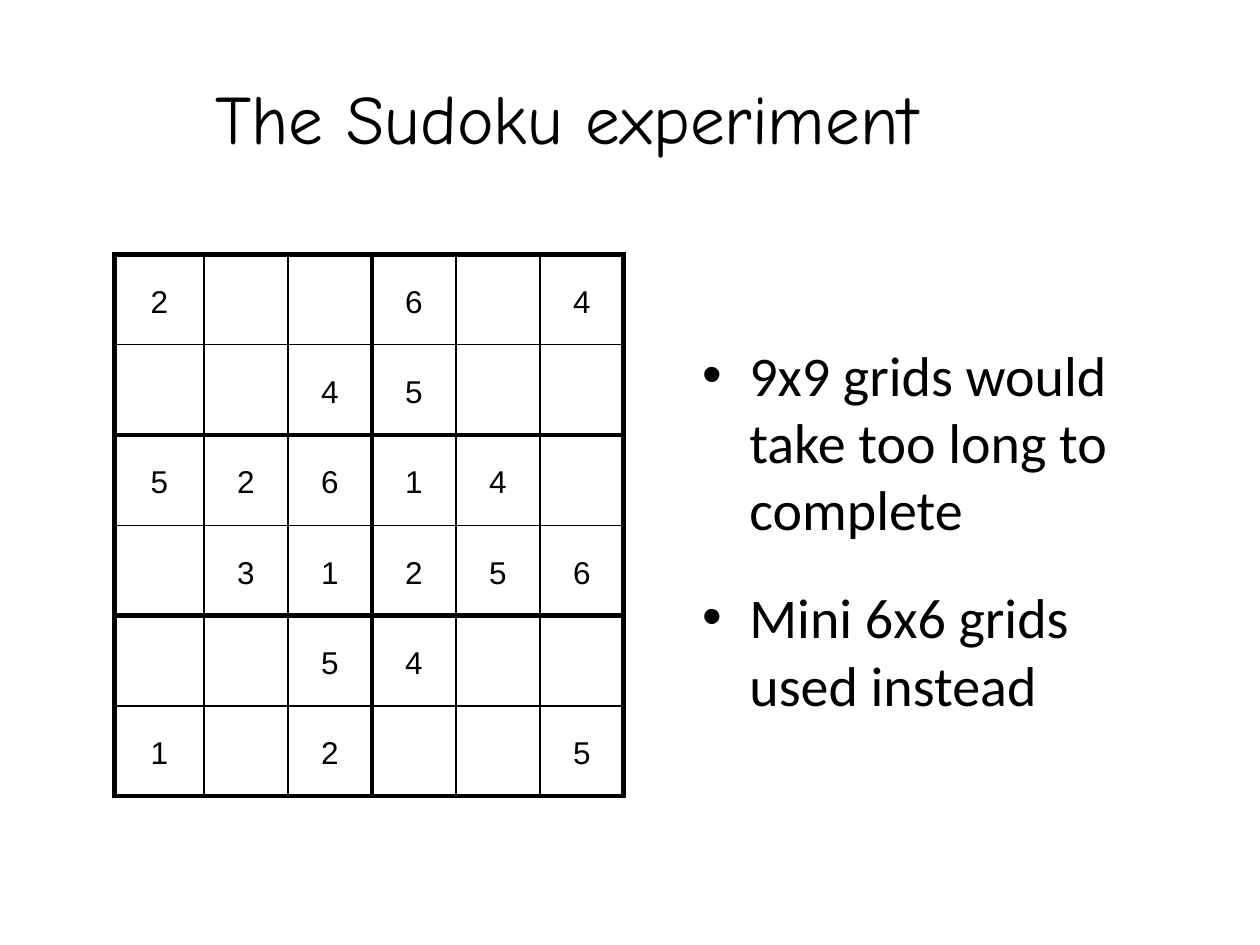
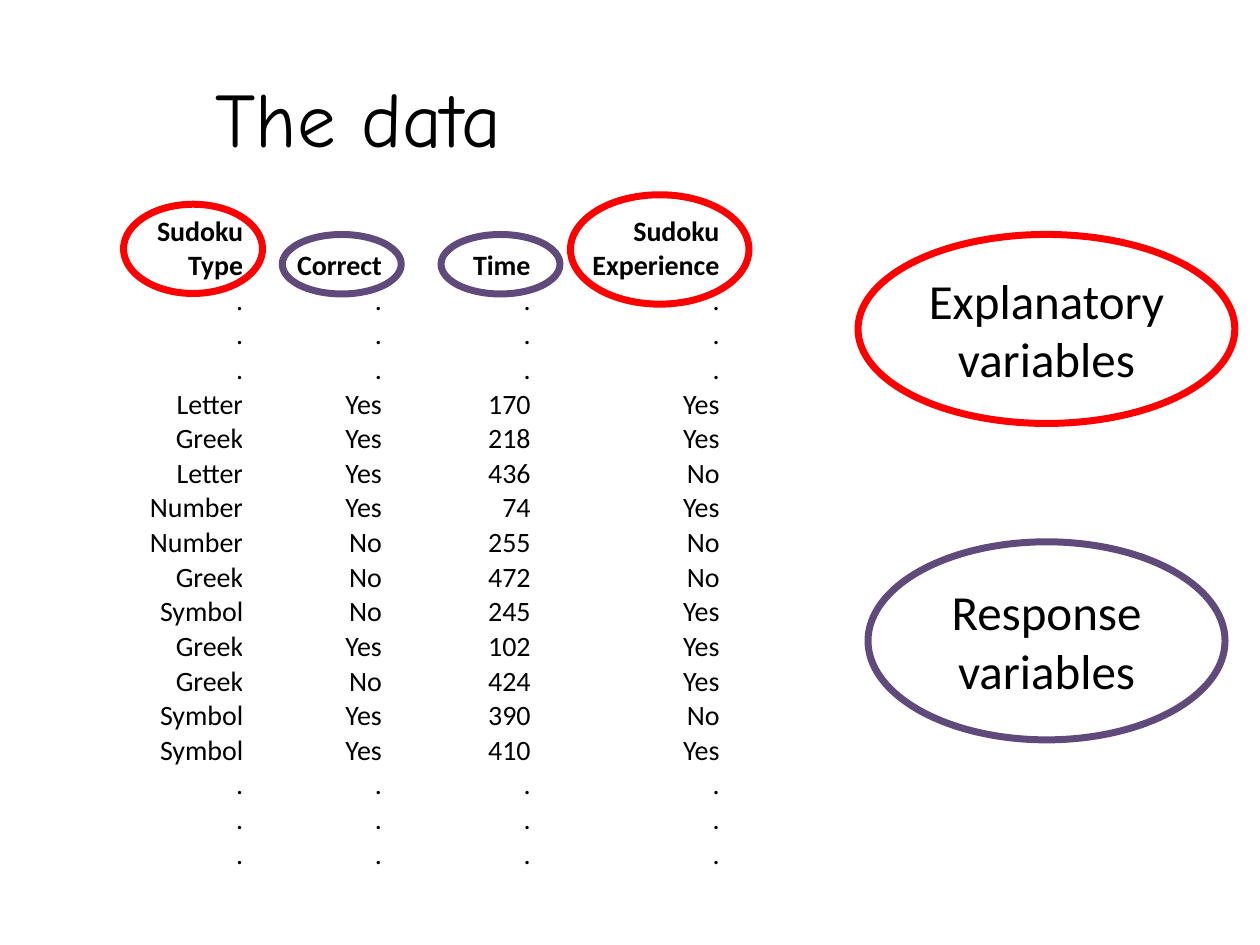
import pptx
import pptx.util
import pptx.dml.color
import pptx.enum.shapes
import pptx.enum.text
import pptx.oxml
import pptx.oxml.ns

Pt = pptx.util.Pt
RGBColor = pptx.dml.color.RGBColor
Align = pptx.enum.text.PP_ALIGN
Anchor = pptx.enum.text.MSO_ANCHOR

BLACK = RGBColor(0x00, 0x00, 0x00)
EXPLANATORY_RED = RGBColor(0xFF, 0x00, 0x00)
RESPONSE_PURPLE = RGBColor(0x60, 0x4A, 0x7B)

TITLE_FONT = {"name": "Comic Neue", "size": Pt(44)}
BODY_FONT = {"name": "Calibri", "size": Pt(32)}
LABEL_FONT = {"name": "Calibri", "size": Pt(28)}
DIGIT_FONT = {"name": "Arial", "size": Pt(18)}
DATA_FONT = {"name": "Calibri", "size": Pt(16), "bold": False}

THICK, THIN = 3, 1
BLOCK_ROWS, BLOCK_COLUMNS = 2, 3
SUDOKU = ["2  6 4", "  45  ", "52614 ", " 31256", "  54  ", "1 2  5"]

HEADINGS = ["Sudoku\nType", "Correct", "Time", "Sudoku\nExperience"]
DOT_ROWS = [["."] * len(HEADINGS)] * 3
RECORDS = [
    ["Letter", "Yes", "170", "Yes"],
    ["Greek", "Yes", "218", "Yes"],
    ["Letter", "Yes", "436", "No"],
    ["Number", "Yes", "74", "Yes"],
    ["Number", "No", "255", "No"],
    ["Greek", "No", "472", "No"],
    ["Symbol", "No", "245", "Yes"],
    ["Greek", "Yes", "102", "Yes"],
    ["Greek", "No", "424", "Yes"],
    ["Symbol", "Yes", "390", "No"],
    ["Symbol", "Yes", "410", "Yes"],
]


def apply_format(target, values):
    for name, value in values.items():
        setattr(target, name, value)


def write_text(frame, lines, font, paragraph_format):
    for index, line in enumerate(lines):
        para = frame.add_paragraph() if index else frame.paragraphs[0]
        apply_format(para, paragraph_format)
        span = para.add_run()
        span.text = line
        apply_format(span.font, font)
        span.font.color.rgb = BLACK


def place(box, left, top, width, height):
    apply_format(box, {"left": Pt(left), "top": Pt(top),
                       "width": Pt(width), "height": Pt(height)})


def add_page(deck, layout, title, size):
    page = deck.slides.add_slide(deck.slide_layouts[layout])
    box = page.shapes.title
    place(box, 116, 21.6, 487.4, 90)
    apply_format(box.text_frame, {
        "vertical_anchor": Anchor.MIDDLE, "word_wrap": True,
        "auto_size": pptx.enum.text.MSO_AUTO_SIZE.NONE})
    write_text(box.text_frame, [title], TITLE_FONT | {"size": Pt(size)},
               {"alignment": Align.LEFT})
    return page


def add_bullets(page, lines):
    box = page.placeholders[1]
    place(box, 394, 190.8, 290, 291.6)
    frame = box.text_frame
    apply_format(frame, {"word_wrap": True,
                         "auto_size": pptx.enum.text.MSO_AUTO_SIZE.NONE})
    write_text(frame, lines, BODY_FONT, {"space_before": Pt(23.4)})
    frame.paragraphs[0].space_before = Pt(0)


def add_plain_table(page, left, top, widths, heights):
    table = page.shapes.add_table(
        len(heights), len(widths), Pt(left), Pt(top),
        Pt(sum(widths)), Pt(sum(heights))).table
    apply_format(table, {"first_row": False, "horz_banding": False})
    for column, width in zip(table.columns, widths):
        column.width = Pt(width)
    for row, height in zip(table.rows, heights):
        row.height = Pt(height)
    return table


def fill_cell(cell, text, font, side_margin, anchor, paragraph_format):
    cell.fill.background()
    apply_format(cell, {
        "margin_left": Pt(side_margin), "margin_right": Pt(side_margin),
        "margin_top": Pt(0), "margin_bottom": Pt(0),
        "vertical_anchor": anchor})
    if text:
        write_text(cell.text_frame, text.split("\n"), font, paragraph_format)


def set_border(cell, side, weight):
    properties = cell._tc.get_or_add_tcPr()
    properties.append(pptx.oxml.parse_xml(
        f'<a:ln{side} {pptx.oxml.ns.nsdecls("a")} w="{Pt(weight)}">'
        f'<a:solidFill><a:srgbClr val="{BLACK}"/></a:solidFill></a:ln{side}>'))


def edge_weight(position, block):
    return THIN if position % block else THICK


def add_sudoku(page):
    table = add_plain_table(page, 65.5, 145.4, [51] + [48] * 5, [51.6] * 6)
    for row, digits in enumerate(SUDOKU):
        for column, digit in enumerate(digits):
            cell = table.cell(row, column)
            set_border(cell, "L", edge_weight(column, BLOCK_COLUMNS))
            set_border(cell, "R", edge_weight(column + 1, BLOCK_COLUMNS))
            set_border(cell, "T", edge_weight(row, BLOCK_ROWS))
            set_border(cell, "B", edge_weight(row + 1, BLOCK_ROWS))
            fill_cell(cell, digit.strip(), DIGIT_FONT, 5, Anchor.MIDDLE,
                      {"alignment": Align.CENTER, "line_spacing": 1.15})


def add_data(page):
    rows = [HEADINGS] + DOT_ROWS + RECORDS + DOT_ROWS
    heights = [39.4] + [19.8] * (len(rows) - 1)
    table = add_plain_table(page, 54, 122.4, [85, 79.2, 85, 108], heights)
    for row, values in enumerate(rows):
        font = DATA_FONT | {"bold": row == 0}
        for column, value in enumerate(values):
            fill_cell(table.cell(row, column), value, font, 0, Anchor.BOTTOM,
                      {"alignment": Align.RIGHT})


def add_ring(page, color, left, top, width, height, label=""):
    ring = page.shapes.add_shape(
        pptx.enum.shapes.MSO_SHAPE.OVAL,
        Pt(left), Pt(top), Pt(width), Pt(height))
    ring.shadow.inherit = False
    ring.fill.background()
    ring.line.color.rgb = color
    ring.line.width = Pt(4)
    if label:
        apply_format(ring.text_frame, {"word_wrap": True,
                                       "vertical_anchor": Anchor.MIDDLE})
        write_text(ring.text_frame, [label], LABEL_FONT,
                   {"alignment": Align.CENTER})


def main():
    deck = pptx.Presentation()
    apply_format(deck, {"slide_width": Pt(720), "slide_height": Pt(540)})

    page = add_page(deck, 1, "The Sudoku experiment", 39.6)
    add_bullets(page, ["9x9 grids would take too long to complete",
                       "Mini 6x6 grids used instead"])
    add_sudoku(page)

    page = add_page(deck, 5, "The data", 44)
    add_data(page)
    add_ring(page, EXPLANATORY_RED, 70.6, 116.7, 79.4, 51)
    add_ring(page, EXPLANATORY_RED, 326, 111.3, 102, 62.5)
    add_ring(page, EXPLANATORY_RED, 490.3, 134, 215.3, 108,
             "Explanatory variables")
    add_ring(page, RESPONSE_PURPLE, 252, 134, 68, 34)
    add_ring(page, RESPONSE_PURPLE, 496, 309.6, 204, 113.2,
             "Response variables")
    add_ring(page, RESPONSE_PURPLE, 161.3, 134, 68, 34)

    deck.save("out.pptx")


if __name__ == "__main__":
    main()
